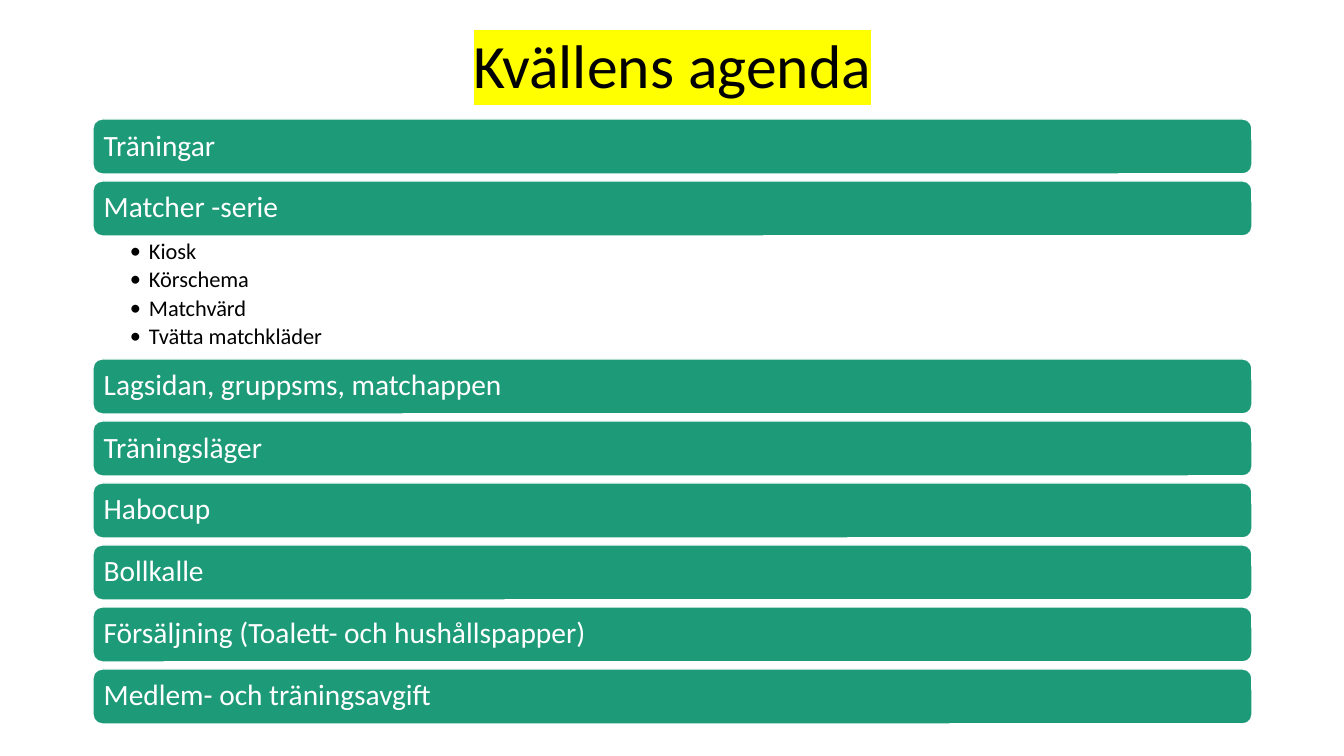
from lxml import etree
from pptx import Presentation
from pptx.dml.color import RGBColor
from pptx.enum.shapes import MSO_SHAPE
from pptx.enum.text import MSO_ANCHOR, MSO_AUTO_SIZE, PP_ALIGN
from pptx.oxml.ns import qn
from pptx.util import Pt

ROUND = MSO_SHAPE.ROUNDED_RECTANGLE
MIDDLE, TOP = MSO_ANCHOR.MIDDLE, MSO_ANCHOR.TOP
LEFT, CENTER = PP_ALIGN.LEFT, PP_ALIGN.CENTER
PX = 12192000 / 1344
EDGE, WIDE = 93, 1159
BAR, STEP = 55, 62
TOPICS = [
    "Träningar",
    "Matcher -serie",
    "Lagsidan, gruppsms, matchappen",
    "Träningsläger",
    "Habocup",
    "Bollkalle",
    "Försäljning (Toalett- och hushållspapper)",
    "Medlem- och träningsavgift",
]
DUTIES = ["Kiosk", "Körschema", "Matchvärd", "Tvätta matchkläder"]


def px(n):
    return round(n * PX)


def style(para, size, color, align):
    para.alignment = align
    para.line_spacing = 0.9
    para.space_before = Pt(0)
    font = para.font
    font.name, font.size = "Calibri", Pt(size)
    font.color.rgb = RGBColor.from_string(color)


prs = Presentation()
prs.slide_width, prs.slide_height = px(1344), px(756)
slide = prs.slides.add_slide(prs.slide_layouts[1])
title, body = slide.placeholders

# Title
title.left, title.top, title.width, title.height = px(EDGE), px(16), px(WIDE), px(105)
frame = title.text_frame
frame.text = "Kvällens agenda"
frame.auto_size = MSO_AUTO_SIZE.NONE
frame.vertical_anchor = MIDDLE
para = frame.paragraphs[0]
style(para, 44, "000000", CENTER)
props = para.runs[0].font._element
mark = etree.SubElement(props, qn("a:highlight"))
etree.SubElement(mark, qn("a:srgbClr"), val="FFFF00")

# Topic bars, with room for the duties after the second
for i, topic in enumerate(TOPICS):
    top = 119 + i * STEP if i < 2 else 359 + (i - 2) * STEP
    bar = slide.shapes.add_shape(ROUND, px(EDGE), px(top), px(WIDE), px(BAR))
    bar.shadow.inherit = False
    bar.fill.solid()
    bar.fill.fore_color.rgb = RGBColor.from_string("1D9A78")
    bar.line.color.rgb = RGBColor.from_string("FFFFFF")
    bar.line.width = Pt(1)
    frame = bar.text_frame
    frame.text = topic
    frame.vertical_anchor = MIDDLE
    frame.margin_left = frame.margin_right = px(8)
    frame.margin_top = frame.margin_bottom = 0
    style(frame.paragraphs[0], 21, "FFFFFF", LEFT)

# Match duties
body.left, body.top, body.width, body.height = px(EDGE), px(237), px(WIDE), px(122)
frame = body.text_frame
frame.text = "\n".join(DUTIES)
frame.auto_size = MSO_AUTO_SIZE.NONE
frame.vertical_anchor = TOP
frame.margin_left, frame.margin_right = px(37), px(16)
frame.margin_top = frame.margin_bottom = px(3)
for para in frame.paragraphs:
    para.level = 1
    props = para._p.get_or_add_pPr()
    props.set("marL", str(px(19)))
    props.set("indent", str(px(-19)))
    etree.SubElement(props, qn("a:buFont"), typeface="Calibri")
    etree.SubElement(props, qn("a:buChar"), char="•")
    style(para, 16, "000000", LEFT)
    para.space_after = Pt(3)

prs.save("out.pptx")
